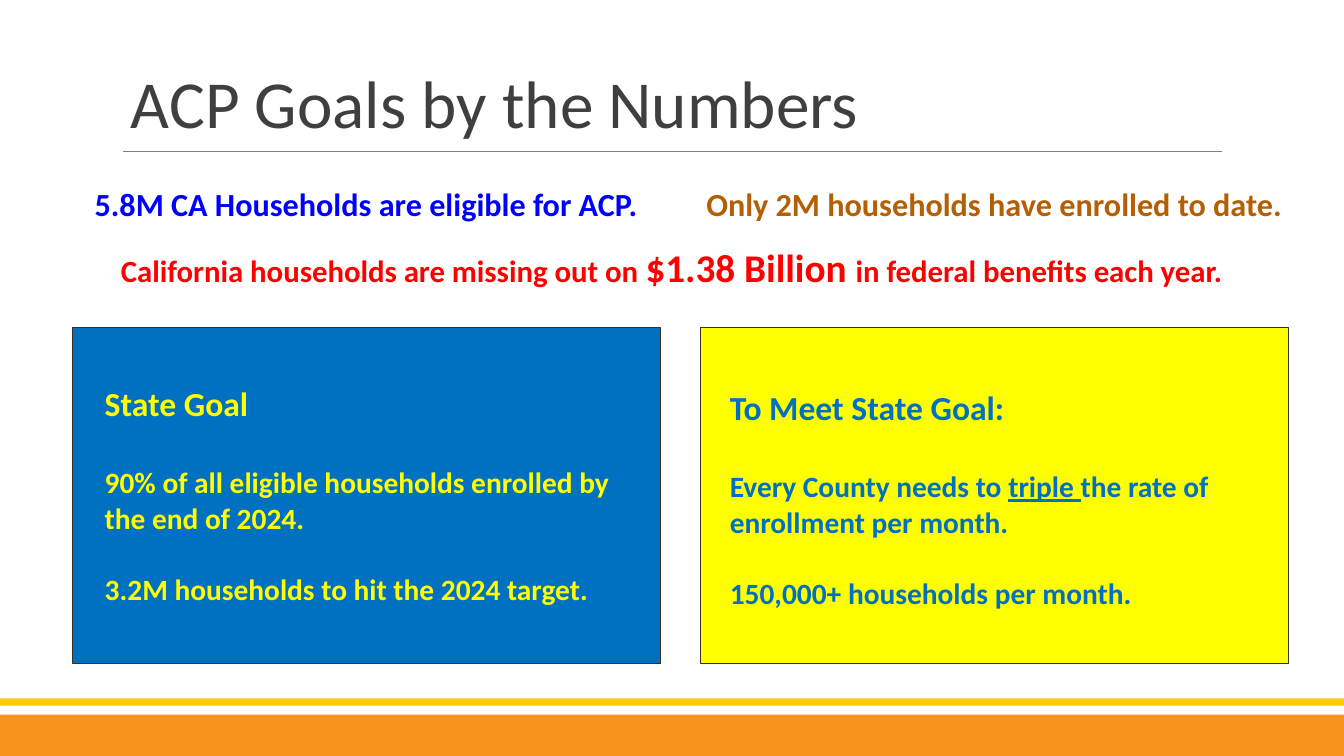
"""Build the ACP goals slide."""
from lxml import etree
from pptx import Presentation
from pptx.dml.color import RGBColor
from pptx.enum.shapes import MSO_CONNECTOR, MSO_SHAPE
from pptx.enum.text import MSO_ANCHOR, PP_ALIGN
from pptx.oxml.ns import qn
from pptx.util import Pt

RECT = MSO_SHAPE.RECTANGLE
LINE = MSO_CONNECTOR.STRAIGHT
LEFT, MID = PP_ALIGN.LEFT, PP_ALIGN.CENTER
TOP, LOW = MSO_ANCHOR.TOP, MSO_ANCHOR.BOTTOM
PX = 9144
WIDE, HIGH = 1333, 750
FONT = "Calibri"
HUES = {
    "orange": "F8931D", "gold": "FFCA08", "rule": "7F7F7F", "title": "3F3F3F",
    "brown": "B45F06", "red": "FF0000", "blue": "0000FF", "sea": "0070C0",
    "yellow": "FFFF00", "edge": "39302A",
}

BANDS = [(709, 41, "orange"), (693, 7, "gold")]
TITLE = "ACP Goals by the Numbers"
FACTS = [
    ((72, 173, 583, 59), "blue", [("5.8M CA Households are eligible for ACP.", 23)]),
    ((670, 173, 633, 59), "brown", [("Only 2M households have enrolled to date.", 23)]),
    ((72, 231, 1188, 67), "red", [
        ("California households are missing out on ", 22),
        ("$1.38 Billion ", 28),
        ("in federal benefits each year.", 22),
    ]),
]
CARDS = [
    (72, (94, 370), "sea", "yellow", [
        [("State Goal", 24)],
        [("90% of all eligible households enrolled by the end of 2024.", 21)],
        [("3.2M households to hit the 2024 target.", 21)],
    ]),
    (695, (714, 374), "yellow", "sea", [
        [("To Meet State Goal:", 24)],
        [("Every County needs to ", 21), ("triple ", 21, True),
         ("the rate of enrollment per month.", 21)],
        [("150,000+ households per month.", 21)],
    ]),
]
GAPS = [0, 29.3, 25.6]


def hue(name):
    return RGBColor.from_string(HUES[name])


def scale(*nums):
    return [n * PX for n in nums]


def block(slide, box, fill, edge=None):
    shape = slide.shapes.add_shape(RECT, *scale(*box))
    shape.shadow.inherit = False
    shape.fill.solid()
    shape.fill.fore_color.rgb = hue(fill)
    if edge:
        shape.line.color.rgb = hue(edge)
        shape.line.width = Pt(0.75)
    else:
        shape.line.fill.background()


def rule(slide, ends):
    line = slide.shapes.add_connector(LINE, *scale(*ends))
    line.line.color.rgb = hue("rule")
    line.line.width = Pt(0.75)
    etree.SubElement(line._element.spPr, qn("a:effectLst"))


def write(slide, box, paras, color, align=LEFT, bold=True, pad=10, anchor=TOP, lead=1.0):
    frame = slide.shapes.add_textbox(*scale(*box)).text_frame
    frame.word_wrap = True
    frame.vertical_anchor = anchor
    frame.margin_left = frame.margin_right = 10 * PX
    frame.margin_top = frame.margin_bottom = pad * PX
    for i, (runs, gap) in enumerate(zip(paras, GAPS)):
        para = frame.add_paragraph() if i else frame.paragraphs[0]
        para.alignment = align
        para.line_spacing = lead
        para.space_before = Pt(gap)
        for text, size, *under in runs:
            run = para.add_run()
            run.text = text
            font = run.font
            font.name, font.size, font.bold = FONT, Pt(size), bold
            font.color.rgb = hue(color)
            if under:
                font.underline = True


def main():
    deck = Presentation()
    deck.slide_width, deck.slide_height = scale(WIDE, HIGH)
    slide = deck.slides.add_slide(deck.slide_layouts[6])
    for top, tall, fill in BANDS:
        block(slide, (0, top, WIDE, tall), fill)
    rule(slide, (122, 150, 1212, 150))
    write(slide, (120, 31, 1100, 115), [[(TITLE, 48)]], "title",
          bold=False, pad=5, anchor=LOW, lead=0.85)
    for box, color, runs in FACTS:
        write(slide, box, [runs], color, MID)
    for left, spot, fill, color, paras in CARDS:
        block(slide, (left, 325, 583, 333), fill, "edge")
        write(slide, (*spot, 546, 270), paras, color)
    deck.save("out.pptx")


if __name__ == "__main__":
    main()
